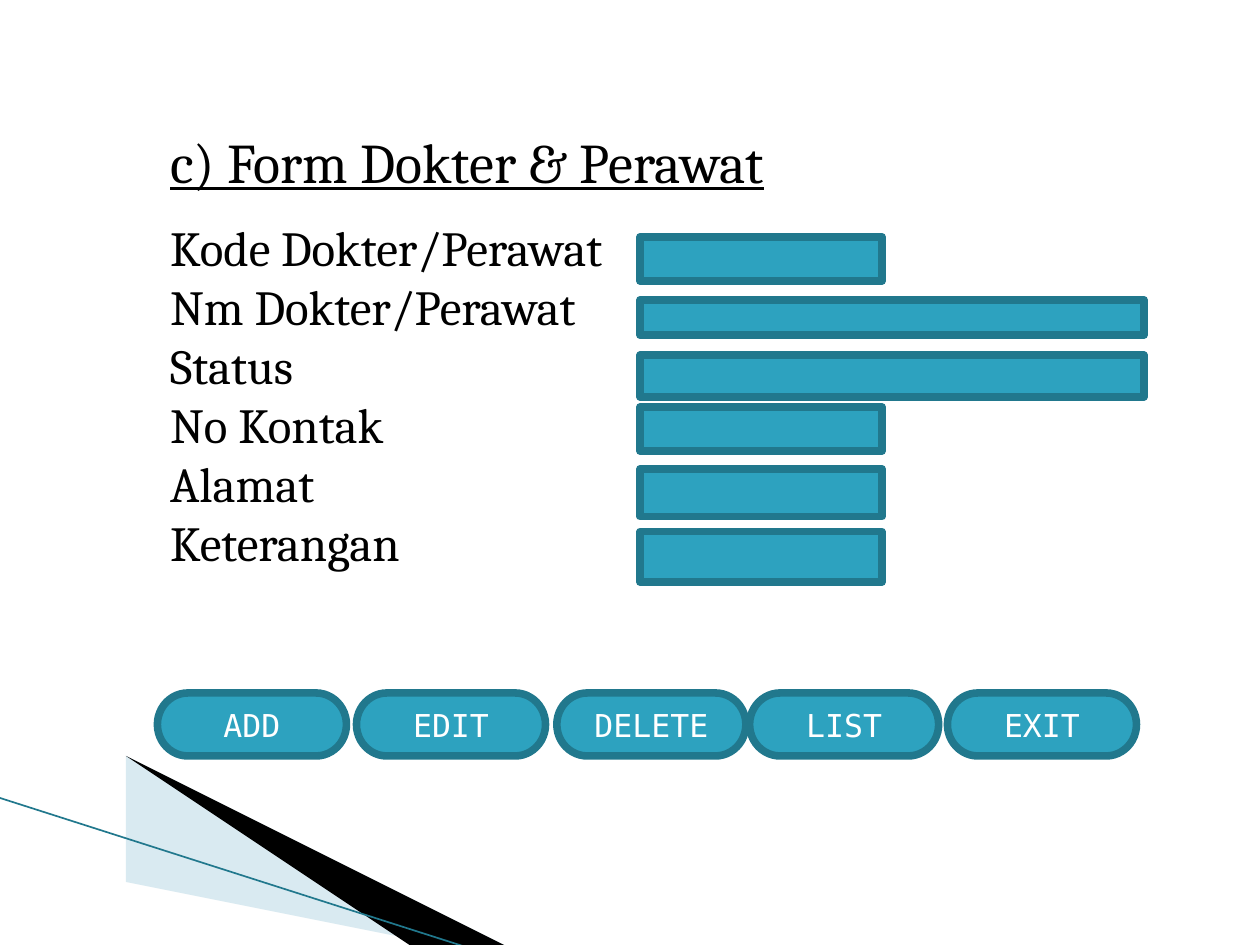
from typing import NamedTuple

from lxml import etree
from pptx import Presentation
from pptx.dml.color import RGBColor
from pptx.enum import shapes, text
from pptx.oxml import ns
from pptx.util import Inches, Pt

HUES = {"fill": "2DA2BF", "edge": "21788D", "pale": "A0CBDC",
        "ink": "000000", "white": "FFFFFF"}
SERIF, MONO = "Cambria", "DejaVu Sans Mono"
LEFT, COL = 1.25, 5.08
SHORT, LONG = 1.92, 4


class Field(NamedTuple):
    label: str
    top: float
    width: float
    height: float


class Button(NamedTuple):
    label: str
    left: float


class Wedge(NamedTuple):
    points: list
    hue: str
    alpha: int


FIELDS = [
    Field("Kode Dokter/Perawat", 1.88, SHORT, 0.35),
    Field("Nm Dokter/Perawat", 2.38, LONG, 0.28),
    Field("Status", 2.82, LONG, 0.33),
    Field("No Kontak", 3.23, SHORT, 0.35),
    Field("Alamat", 3.72, SHORT, 0.38),
    Field("Keterangan", 4.22, SHORT, 0.4),
]
BUTTONS = [Button("ADD", 1.25), Button("EDIT", 2.83), Button("DELETE", 4.42),
           Button("LIST", 5.95), Button("EXIT", 7.52)]
WEDGES = [
    Wedge([(0.55, 6.51), (5.95, 7.51), (4.56, 7.51), (0.55, 6.5)], "pale", 40),
    Wedge([(0.53, 6.49), (4.57, 7.51), (3.72, 7.52), (0.54, 6.5)], "ink", 100),
]


def rgb(hue: str) -> RGBColor:
    return RGBColor.from_string(HUES[hue])


def add_run(para, words: str, size: float, face: str, hue: str) -> None:
    run = para.add_run()
    run.text = words
    run.font.size = Pt(size)
    run.font.name = face
    run.font.color.rgb = rgb(hue)


def set_frame(holder, top: float, height: float):
    """Move a placeholder into the text column and return its text frame."""
    holder.left, holder.top = Inches(LEFT), Inches(top)
    holder.width, holder.height = Inches(8), Inches(height)
    frame = holder.text_frame
    frame.word_wrap = True
    frame.auto_size = text.MSO_AUTO_SIZE.NONE
    frame.vertical_anchor = text.MSO_ANCHOR.TOP
    return frame


def add_wedge(slide, wedge: Wedge) -> None:
    start, *rest = wedge.points
    build = slide.shapes.build_freeform(*start, scale=Inches(1))
    build.add_line_segments(rest, close=True)
    shape = build.convert_to_shape()
    shape.shadow.inherit = False
    shape.fill.solid()
    shape.fill.fore_color.rgb = rgb(wedge.hue)
    shape.line.fill.background()
    if wedge.alpha < 100:
        tone = shape.fill._xPr.find(".//" + ns.qn("a:srgbClr"))
        etree.SubElement(tone, ns.qn("a:alpha"), val=str(wedge.alpha * 1000))


def add_edge(slide) -> None:
    line = slide.shapes.add_connector(
        shapes.MSO_CONNECTOR.STRAIGHT,
        Inches(-0.01), Inches(6.33), Inches(3.71), Inches(7.52))
    line.line.color.rgb = rgb("edge")
    line.line.width = Pt(0.95)
    etree.SubElement(line._element.spPr, ns.qn("a:effectLst"))


def add_box(slide, kind, left: float, top: float, width: float, height: float):
    box = slide.shapes.add_shape(
        kind, Inches(left), Inches(top), Inches(width), Inches(height))
    box.shadow.inherit = False
    box.fill.solid()
    box.fill.fore_color.rgb = rgb("fill")
    box.line.color.rgb = rgb("edge")
    box.line.width = Pt(4.33)
    return box


def add_button(slide, button: Button) -> None:
    box = add_box(slide, shapes.MSO_SHAPE.FLOWCHART_TERMINATOR,
                  button.left, 5.5, 1.5, 0.5)
    box.text_frame.vertical_anchor = text.MSO_ANCHOR.MIDDLE
    para = box.text_frame.paragraphs[0]
    para.alignment = text.PP_ALIGN.CENTER
    add_run(para, button.label, 18, MONO, "white")


def add_title(slide) -> None:
    para = set_frame(slide.shapes.title, 0.96, 0.65).paragraphs[0]
    para.alignment = text.PP_ALIGN.LEFT
    add_run(para, "c) Form Dokter & Perawat", 32, SERIF, "ink")
    para.runs[0].font.underline = True


def add_labels(slide) -> None:
    frame = set_frame(slide.placeholders[1], 1.68, 3.4)
    for i, field in enumerate(FIELDS):
        para = frame.add_paragraph() if i else frame.paragraphs[0]
        props = para._p.get_or_add_pPr()
        props.set("marL", "0")
        props.set("indent", "0")
        etree.SubElement(props, ns.qn("a:buNone"))
        para.space_before = Pt(0)
        add_run(para, field.label, 28, SERIF, "ink")


def main() -> None:
    deck = Presentation()
    deck.slide_width, deck.slide_height = Inches(10), Inches(7.5)
    slide = deck.slides.add_slide(deck.slide_layouts[1])
    for wedge in WEDGES:
        add_wedge(slide, wedge)
    add_edge(slide)
    add_title(slide)
    add_labels(slide)
    for field in FIELDS:
        add_box(slide, shapes.MSO_SHAPE.RECTANGLE,
                COL, field.top, field.width, field.height)
    for button in BUTTONS:
        add_button(slide, button)
    deck.save("out.pptx")


if __name__ == "__main__":
    main()
